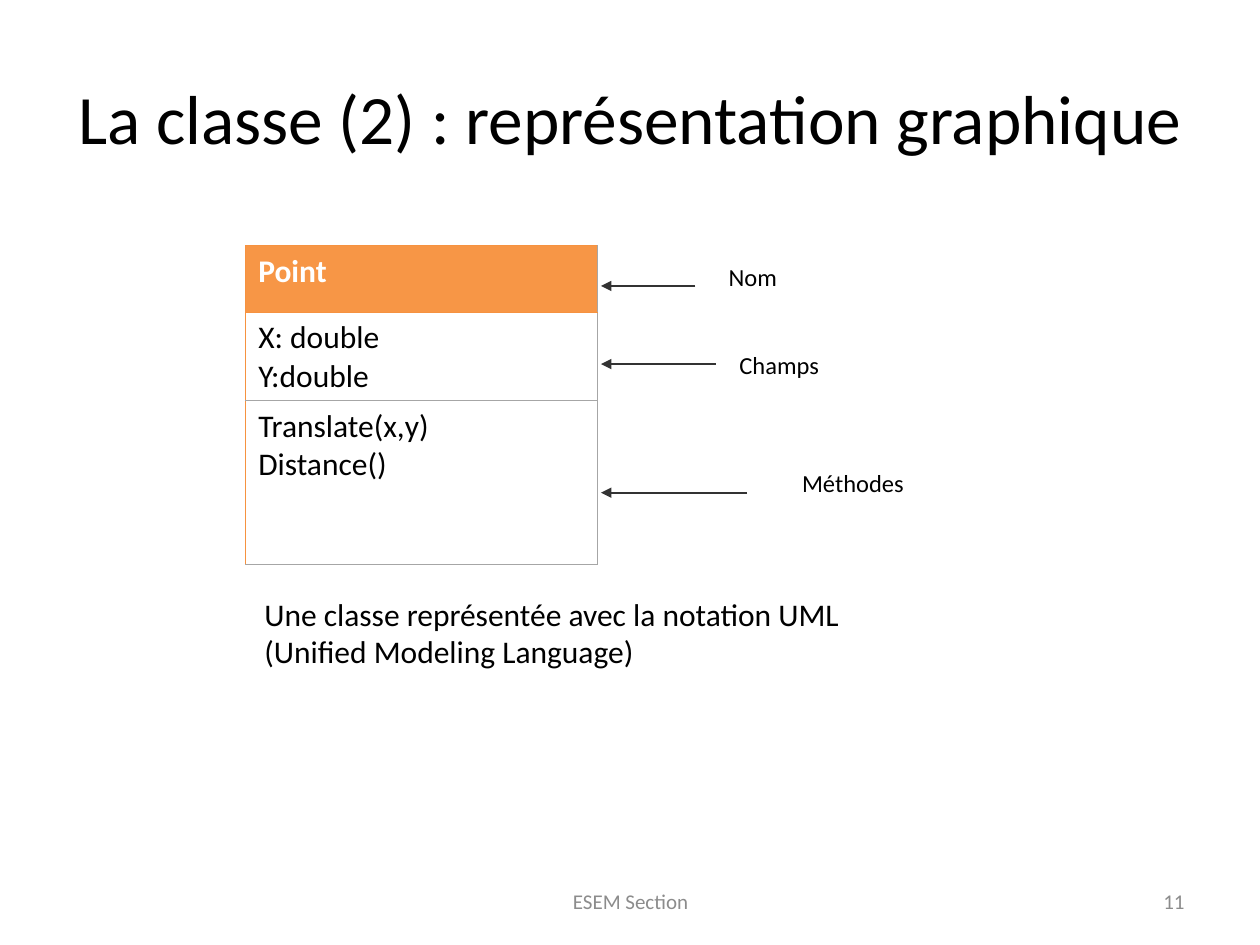
from dataclasses import dataclass

import pptx
import pptx.dml.color
import pptx.enum.shapes
import pptx.enum.text
import pptx.oxml
import pptx.oxml.ns
import pptx.util

# The slide is a grid of 100 columns by 75 rows of square cells
CELL = pptx.util.Inches(0.1)
COLUMNS, ROWS = 100, 75
FONT = "Calibri"
COLORS = {
    "text": "000000",
    "footer": "8C8C8C",
    "header": "F79646",
    "header_text": "FFFFFF",
    "body": "FFFFFF",
    "accent_border": "F69240",
    "grey_border": "A6A6A6",
    "arrow": "333333",
}
ALIGN = pptx.enum.text.PP_ALIGN


@dataclass
class Label:
    text: str
    column: float
    row: float
    columns: float
    rows: float
    size: float
    color: str = "text"
    align: ALIGN = ALIGN.CENTER
    wrap: bool = True


@dataclass
class Compartment:
    lines: list[str]
    rows: float
    fill: str = "body"
    color: str = "text"
    bold: bool = False


@dataclass
class Arrow:
    start: float
    row: float


LABELS = [
    Label("La classe (2) : représentation graphique", 5, 3, 90, 12.5, 39.6),
    Label("ESEM Section", 34.2, 69.5, 31.7, 4, 12, "footer"),
    Label("11", 71.7, 69.5, 23.3, 4, 12, "footer", ALIGN.RIGHT),
    Label("Une classe représentée avec la notation UML (Unified Modeling Language)",
          20, 46.7, 50.3, 7, 18, align=ALIGN.LEFT),
    Label("Nom", 55.5, 20.3, 8.5, 3.3, 14),
    Label("Champs", 57, 27.3, 9.7, 3.3, 14, wrap=False),
    Label("Méthodes", 60.2, 36.7, 15, 3.3, 14),
]
ARROW_END = 47.7
ARROWS = [Arrow(55.2, 22.7), Arrow(56.8, 28.9), Arrow(59.3, 39.1)]
CLASS_LEFT, CLASS_TOP, CLASS_COLUMNS = 19.5, 19.5, 27.9
COMPARTMENTS = [
    Compartment(["Point"], 5.3, "header", "header_text", True),
    Compartment(["X: double", "Y:double"], 7),
    Compartment(["Translate(x,y)", "Distance()"], 13),
]


def grid(*cells: float) -> list[int]:
    return [round(cell * CELL) for cell in cells]


def rgb(name: str) -> pptx.dml.color.RGBColor:
    return pptx.dml.color.RGBColor.from_string(COLORS[name])


def style_font(font, size: float, color: str, bold: bool = False) -> None:
    values = {"name": FONT, "size": pptx.util.Pt(size), "bold": bold}
    for name, value in values.items():
        setattr(font, name, value)
    font.color.rgb = rgb(color)


def add_label(slide, label: Label) -> None:
    shape = slide.shapes.add_textbox(
        *grid(label.column, label.row, label.columns, label.rows))
    frame = shape.text_frame
    frame.word_wrap = label.wrap
    frame.vertical_anchor = pptx.enum.text.MSO_ANCHOR.MIDDLE
    paragraph = frame.paragraphs[0]
    paragraph.alignment = label.align
    run = paragraph.add_run()
    run.text = label.text
    style_font(run.font, label.size, label.color)


def add_arrow(slide, arrow: Arrow) -> None:
    connector = slide.shapes.add_connector(
        pptx.enum.shapes.MSO_CONNECTOR.STRAIGHT,
        *grid(arrow.start, arrow.row, ARROW_END, arrow.row))
    connector.line.width = pptx.util.Pt(1)
    connector.line.color.rgb = rgb("arrow")
    properties = connector.line._get_or_add_ln()
    tail = pptx.oxml.parse_xml(
        f'<a:tailEnd {pptx.oxml.ns.nsdecls("a")} type="triangle"/>')
    properties.append(tail)
    effects = pptx.oxml.parse_xml(f'<a:effectLst {pptx.oxml.ns.nsdecls("a")}/>')
    connector._element.spPr.append(effects)


def set_borders(cell, borders: dict[str, str]) -> None:
    properties = cell._tc.get_or_add_tcPr()
    for index, (side, color) in enumerate(borders.items()):
        properties.insert(index, pptx.oxml.parse_xml(
            f'<a:ln{side} {pptx.oxml.ns.nsdecls("a")} w="9525"><a:solidFill>'
            f'<a:srgbClr val="{COLORS[color]}"/></a:solidFill></a:ln{side}>'))


def add_class_table(slide, compartments: list[Compartment]) -> None:
    height = sum(compartment.rows for compartment in compartments)
    table = slide.shapes.add_table(
        len(compartments), 1,
        *grid(CLASS_LEFT, CLASS_TOP, CLASS_COLUMNS, height)).table
    for index, compartment in enumerate(compartments):
        table.rows[index].height = grid(compartment.rows)[0]
        cell = table.cell(index, 0)
        cell.fill.solid()
        cell.fill.fore_color.rgb = rgb(compartment.fill)
        cell.text = "\n".join(compartment.lines)
        for paragraph in cell.text_frame.paragraphs:
            style_font(paragraph.runs[0].font, 18, compartment.color, compartment.bold)
        # The header is framed in orange down to the first compartment
        above = "accent_border" if index < 2 else "grey_border"
        below = "accent_border" if index == 0 else "grey_border"
        set_borders(cell, {"L": "accent_border", "R": "grey_border",
                           "T": above, "B": below})


def main() -> None:
    presentation = pptx.Presentation()
    presentation.slide_width, presentation.slide_height = grid(COLUMNS, ROWS)
    slide = presentation.slides.add_slide(presentation.slide_layouts[6])

    # Title, footer, caption and annotations
    for label in LABELS:
        add_label(slide, label)

    # Arrows from the annotations to the class
    for arrow in ARROWS:
        add_arrow(slide, arrow)

    # UML class
    add_class_table(slide, COMPARTMENTS)
    presentation.save("out.pptx")


if __name__ == "__main__":
    main()
